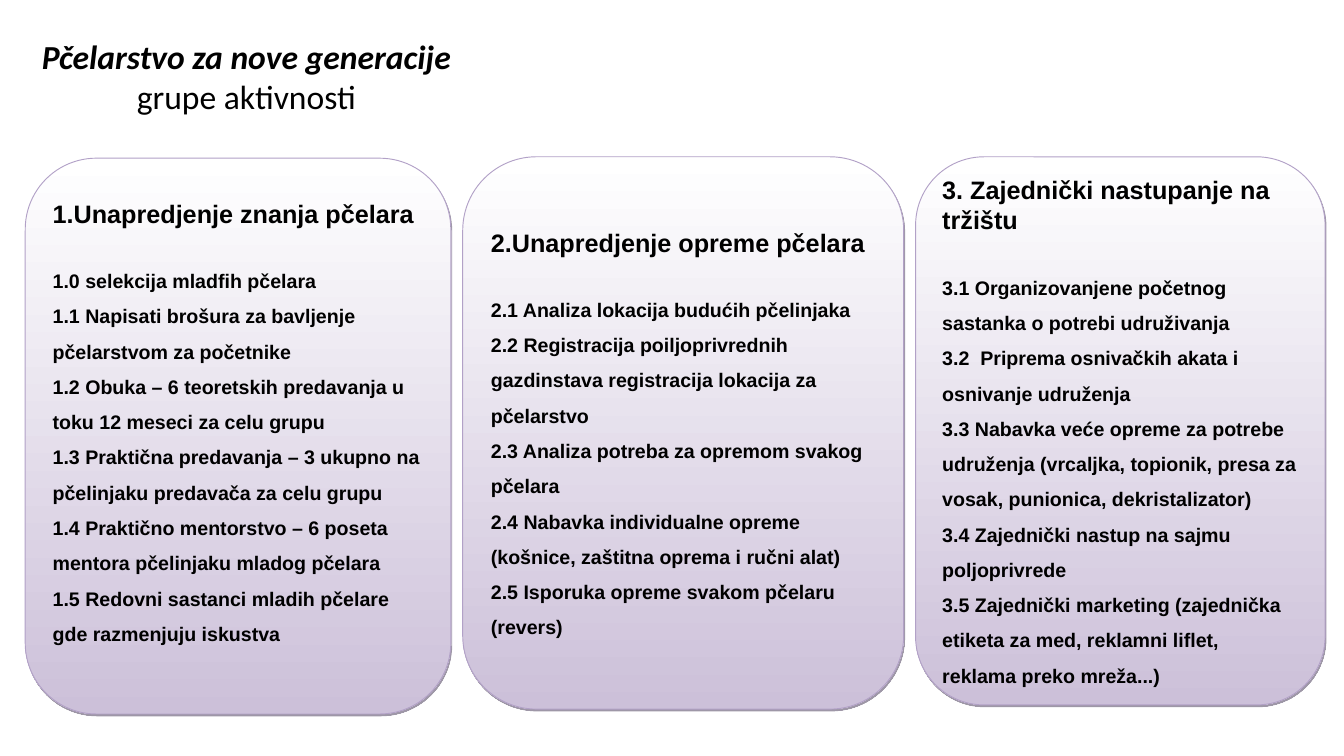
from lxml import etree
from pptx import Presentation
from pptx.dml.color import RGBColor
from pptx.enum import shapes, text
from pptx.oxml import ns
from pptx.util import Emu, Pt

BLACK = RGBColor(0x00, 0x00, 0x00)
WHITE = RGBColor(0xFF, 0xFF, 0xFF)
LILAC = RGBColor(0xCC, 0xC0, 0xD9)
EDGE = RGBColor(0xB2, 0xA1, 0xC7)
SHADE = RGBColor(0x3F, 0x31, 0x51)

TITLE = ("Pčelarstvo za nove generacije", "grupe aktivnosti")
# box: left, top, width, height; foot: extra room under the text
CARDS = [
    dict(box=(36, 226, 608, 794), foot=41, head="1.Unapredjenje znanja pčelara", items=[
        "1.0 selekcija mladfih pčelara",
        "1.1 Napisati brošura za bavljenje pčelarstvom za početnike",
        "1.2 Obuka – 6 teoretskih predavanja u toku 12 meseci za celu grupu",
        "1.3 Praktična predavanja – 3 ukupno na pčelinjaku predavača za celu grupu",
        "1.4 Praktično mentorstvo – 6 poseta mentora pčelinjaku mladog pčelara",
        "1.5 Redovni sastanci mladih pčelare gde razmenjuju iskustva",
    ]),
    dict(box=(661, 224, 630, 789), foot=0, head="2.Unapredjenje opreme pčelara", items=[
        "2.1 Analiza lokacija budućih pčelinjaka",
        "2.2 Registracija poiljoprivrednih gazdinstava registracija lokacija za pčelarstvo",
        "2.3 Analiza potreba za opremom svakog pčelara",
        "2.4 Nabavka individualne opreme (košnice, zaštitna oprema i ručni alat)",
        "2.5 Isporuka opreme svakom pčelaru (revers)",
    ]),
    dict(box=(1308, 224, 585, 783), foot=0, head="3. Zajednički nastupanje na tržištu", items=[
        "3.1 Organizovanjene početnog sastanka o potrebi udruživanja",
        "3.2  Priprema osnivačkih akata i osnivanje udruženja",
        "3.3 Nabavka veće opreme za potrebe udruženja (vrcaljka, topionik, presa za vosak, "
        "punionica, dekristalizator)",
        "3.4 Zajednički nastup na sajmu poljoprivrede",
        "3.5 Zajednički marketing (zajednička etiketa za med, reklamni liflet, "
        "reklama preko mreža...)",
    ]),
]


def px(n):
    return Emu(n * 9525)


def write(frame, words, size, font="Arial", bold=True, italic=False,
          align=text.PP_ALIGN.LEFT, lines=1.0, after=0):
    """Add one paragraph, using the empty first one when there is one."""
    para = frame.paragraphs[0]
    if para.runs:
        para = frame.add_paragraph()
    para.alignment, para.line_spacing = align, lines
    para.space_before, para.space_after = Pt(0), Pt(after)
    run = para.add_run()
    run.text = words
    run.font.name, run.font.size = font, Pt(size)
    run.font.bold, run.font.italic = bold, italic
    run.font.color.rgb = BLACK


def shadow(shape):
    shape.shadow.inherit = False
    effects = shape._element.spPr.find(ns.qn("a:effectLst"))
    outer = etree.SubElement(effects, ns.qn("a:outerShdw"), blurRad="0", dist=str(Pt(2.2)),
                             dir=str(63 * 60000), algn="ctr", rotWithShape="0")
    color = etree.SubElement(outer, ns.qn("a:srgbClr"), val=str(SHADE))
    etree.SubElement(color, ns.qn("a:alpha"), val="50000")


def card(slide, box, foot, head, items):
    shape = slide.shapes.add_shape(shapes.MSO_SHAPE.ROUNDED_RECTANGLE, *map(px, box))
    shape.adjustments[0] = 0.167
    shape.fill.gradient()
    shape.fill.gradient_angle = 270
    for stop, color, place in zip(shape.fill.gradient_stops, (WHITE, LILAC), (0, 1)):
        stop.color.rgb, stop.position = color, place
    shape.line.color.rgb, shape.line.width = EDGE, Pt(1)
    shadow(shape)
    frame = shape.text_frame
    frame.word_wrap = True
    frame.vertical_anchor = text.MSO_ANCHOR.MIDDLE
    frame.margin_bottom = px(5 + foot)
    write(frame, head, 27, after=31)
    for item in items:
        write(frame, item, 21, lines=1.5)


def main():
    deck = Presentation()
    deck.slide_width, deck.slide_height = px(1920), px(1080)
    slide = deck.slides.add_slide(deck.slide_layouts[5])

    title = slide.shapes.title
    title.left, title.top, title.width, title.height = map(px, (0, 46, 704, 126))
    frame = title.text_frame
    frame.word_wrap, frame.auto_size = True, text.MSO_AUTO_SIZE.NONE
    frame.vertical_anchor = text.MSO_ANCHOR.TOP
    for words, strong in zip(TITLE, (True, False)):
        write(frame, words, 36, font="Calibri", bold=strong, italic=strong,
              align=text.PP_ALIGN.CENTER)

    for item in CARDS:
        card(slide, **item)
    deck.save("out.pptx")


if __name__ == "__main__":
    main()
